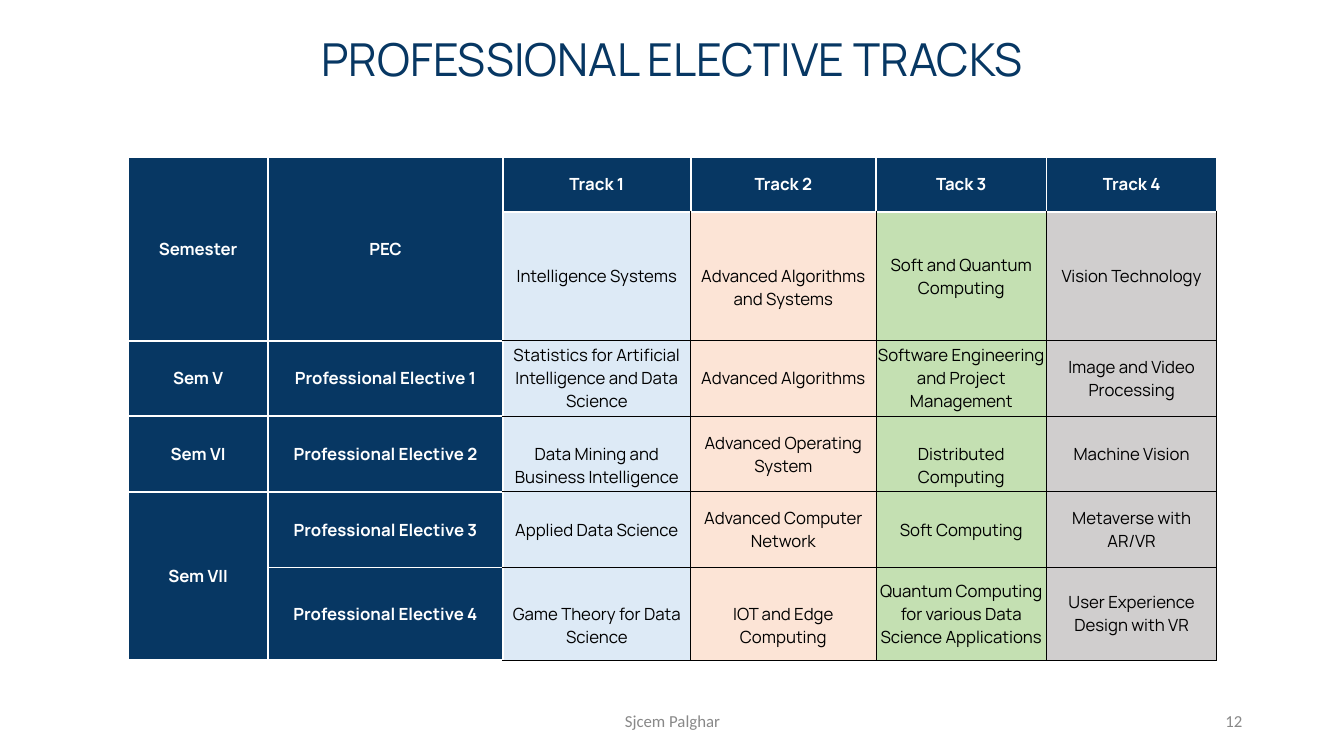
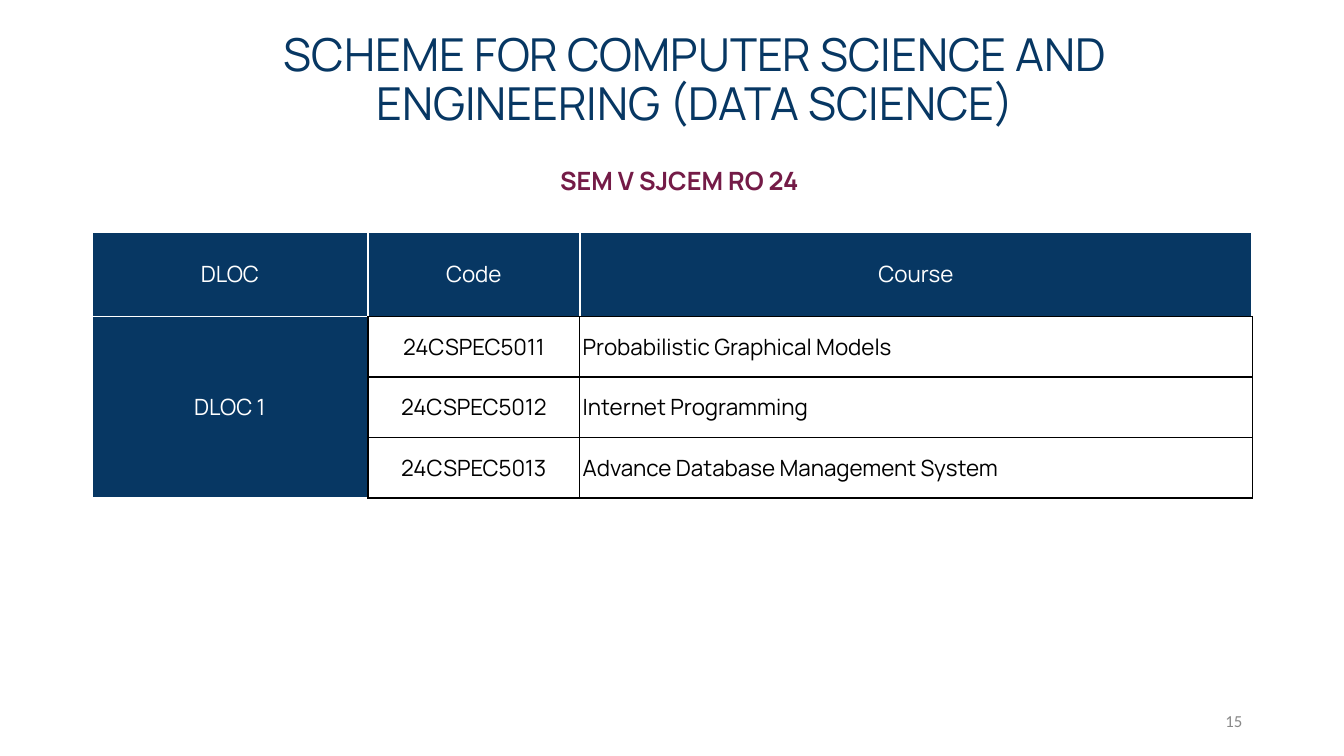
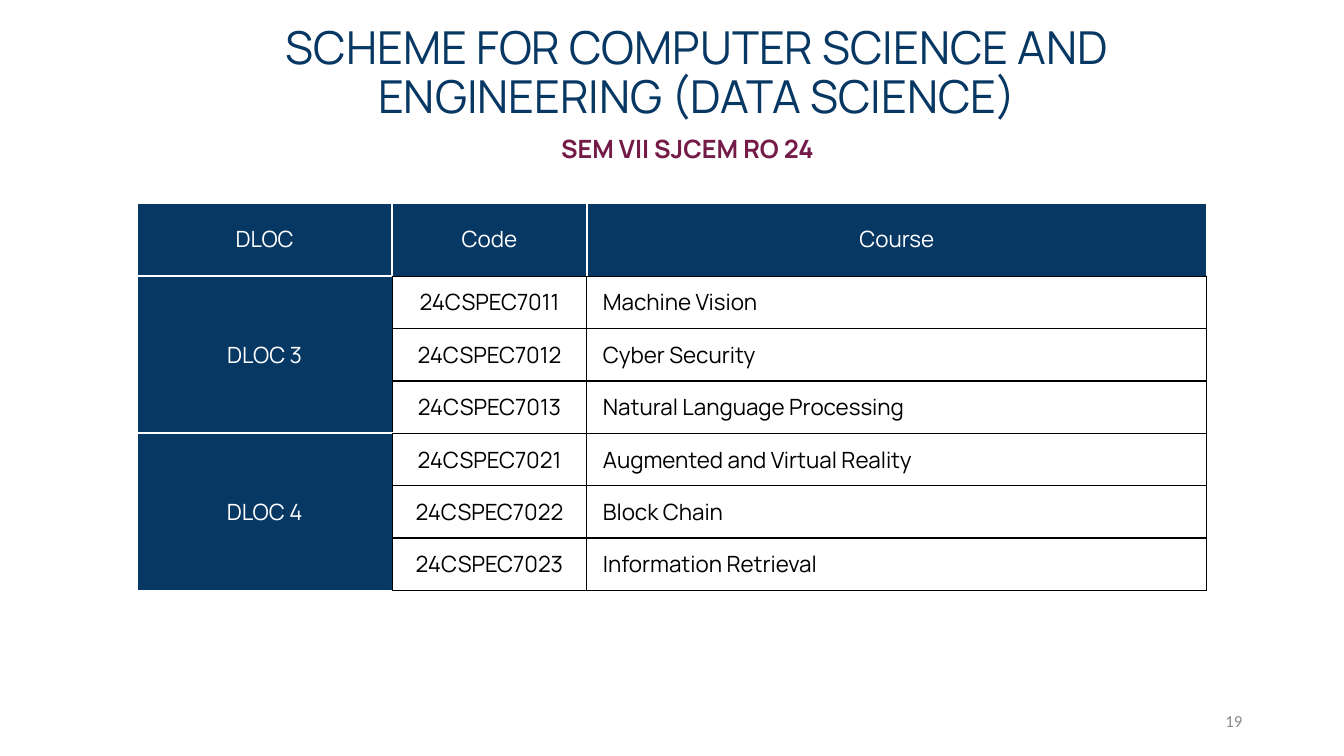
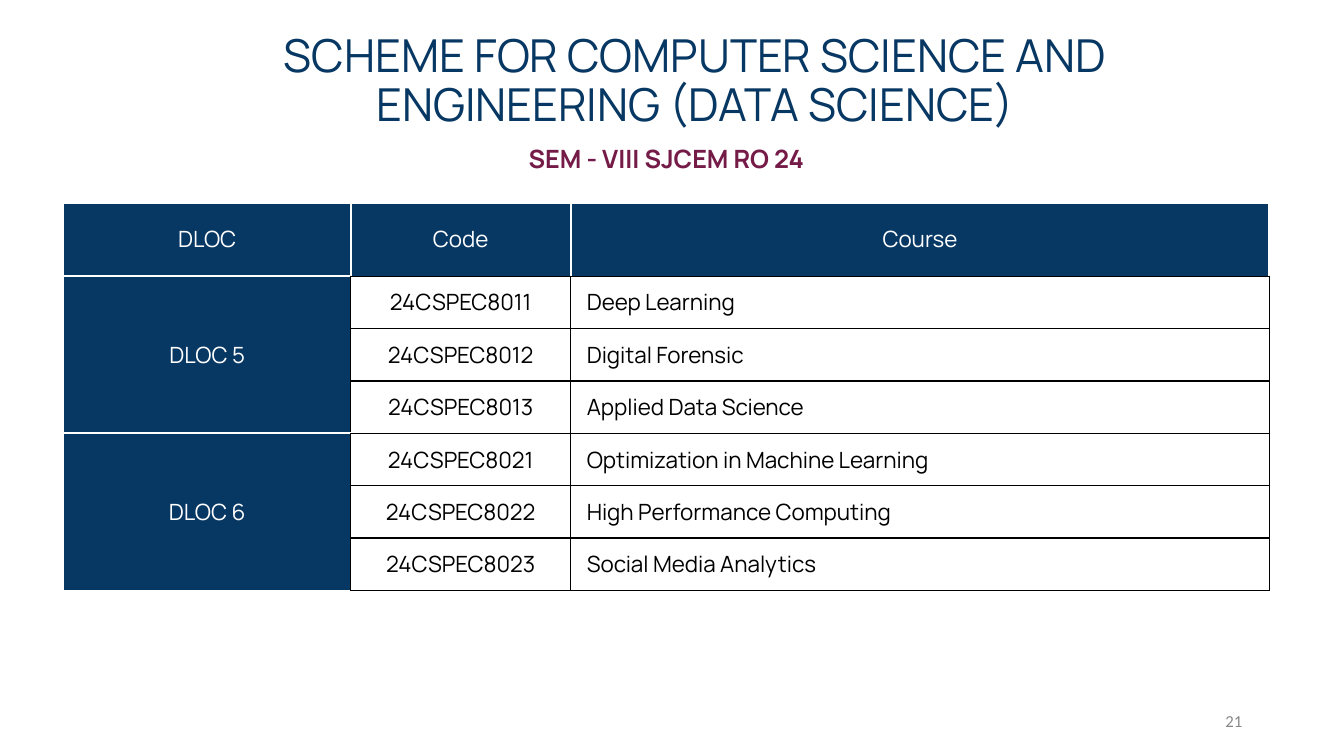
from lxml.etree import SubElement
from pptx import Presentation
from pptx.dml.color import RGBColor
from pptx.enum.text import MSO_ANCHOR, MSO_AUTO_SIZE, PP_ALIGN
from pptx.oxml.ns import qn
from pptx.util import Inches, Pt

COLORS = {
    "navy": "073763",
    "wine": "741B47",
    "gray": "888888",
    "white": "FFFFFF",
    "black": "000000",
    "blue": "DDEAF6",
    "peach": "FCE4D6",
    "green": "C4E0B2",
    "silver": "D0CECE",
}
EDGE_WIDTHS = {"white": 1.5, "black": 1}
NEIGHBORS = {"L": (0, -1), "R": (0, 1), "T": (-1, 0), "B": (1, 0)}
SCHEME_TITLE = "SCHEME FOR COMPUTER SCIENCE AND ENGINEERING (DATA SCIENCE)"
SCHEME_HEADER = ["DLOC", "Code", "Course"]
LOWERED = {
    "Advanced Algorithms and Systems",
    "Data Mining and Business Intelligence",
    "Distributed Computing",
    "Game Theory for Data Science",
    "IOT and Edge Computing",
}

SLIDES = [
    {
        "title": "PROFESSIONAL ELECTIVE TRACKS",
        "title_at": (2.67, 0.25, 8, 0.73),
        "number": "12",
        "footer": "Sjcem Palghar",
        "table_at": (1.27, 1.56),
        "widths": [1.39, 2.33, 1.86, 1.84, 1.69, 1.69],
        "heights": [0.54, 1.28, 0.75, 0.75, 0.75, 0.92],
        "label_columns": 2,
        "fills": ["navy", "navy", "blue", "peach", "green", "silver"],
        "seam": "white",
        "size": 12,
        "bold_labels": True,
        "margin": 0.01,
        "rows": [
            ["Semester", "PEC", "Track 1", "Track 2", "Tack 3", "Track 4"],
            [None, None, "Intelligence Systems", "Advanced Algorithms and Systems",
             "Soft and Quantum Computing", "Vision Technology"],
            ["Sem V", "Professional Elective 1",
             "Statistics for Artificial Intelligence and Data Science", "Advanced Algorithms",
             "Software Engineering and Project Management", "Image and Video Processing"],
            ["Sem VI", "Professional Elective 2", "Data Mining and Business Intelligence",
             "Advanced Operating System", "Distributed Computing", "Machine Vision"],
            ["Sem VII", "Professional Elective 3", "Applied Data Science",
             "Advanced Computer Network", "Soft Computing", "Metaverse with AR/VR"],
            [None, "Professional Elective 4", "Game Theory for Data Science",
             "IOT and Edge Computing", "Quantum Computing for various Data Science Applications",
             "User Experience Design with VR"],
        ],
    },
    {
        "title_at": (1.84, 0.44, 10.11, 0.73),
        "number": "15",
        "subtitle": "SEM V SJCEM RO 24",
        "subtitle_at": (5.31, 1.54, 2.71, 0.4),
        "table_at": (0.91, 2.3),
        "widths": [2.74, 2.1, 6.67],
        "heights": [0.84] + [0.6] * 3,
        "course_indent": 0.03,
        "rows": [
            SCHEME_HEADER,
            ["DLOC 1", "24CSPEC5011", "Probabilistic Graphical Models"],
            [None, "24CSPEC5012", "Internet Programming"],
            [None, "24CSPEC5013", "Advance Database Management System"],
        ],
    },
    {
        "title_at": (1.86, 0.37, 10.11, 0.73),
        "number": "19",
        "subtitle": "SEM VII SJCEM RO 24",
        "subtitle_at": (5.31, 1.22, 2.86, 0.4),
        "table_at": (1.36, 2.01),
        "widths": [2.53, 1.93, 6.15],
        "heights": [0.73] + [0.52] * 6,
        "rows": [
            SCHEME_HEADER,
            ["DLOC 3", "24CSPEC7011", "Machine Vision"],
            [None, "24CSPEC7012", "Cyber Security"],
            [None, "24CSPEC7013", "Natural Language Processing"],
            ["DLOC 4", "24CSPEC7021", "Augmented and Virtual Reality"],
            [None, "24CSPEC7022", "Block Chain"],
            [None, "24CSPEC7023", "Information Retrieval"],
        ],
    },
    {
        "title_at": (1.84, 0.45, 10.11, 0.73),
        "number": "21",
        "subtitle": "SEM - VIII SJCEM RO 24",
        "subtitle_at": (4.66, 1.32, 3.9, 0.4),
        "subtitle_align": PP_ALIGN.CENTER,
        "table_at": (0.63, 2.01),
        "widths": [2.85, 2.18, 6.93],
        "heights": [0.73] + [0.52] * 6,
        "rows": [
            SCHEME_HEADER,
            ["DLOC 5", "24CSPEC8011", "Deep Learning"],
            [None, "24CSPEC8012", "Digital Forensic"],
            [None, "24CSPEC8013", "Applied Data Science"],
            ["DLOC 6", "24CSPEC8021", "Optimization in Machine Learning"],
            [None, "24CSPEC8022", "High Performance Computing"],
            [None, "24CSPEC8023", "Social Media Analytics"],
        ],
    },
]
SCHEME_DEFAULTS = {
    "title": SCHEME_TITLE,
    "label_columns": 1,
    "fills": ["navy", "white", "white"],
    "seam": "black",
    "size": 16,
    "bold_labels": False,
    "margin": 0.03,
    "course_indent": 0.16,
    "subtitle_align": PP_ALIGN.RIGHT,
}


def write(frame, text, size, color, font="Manrope", bold=False, align=PP_ALIGN.CENTER, spacing=None):
    para = frame.paragraphs[0]
    para.alignment = align
    para.line_spacing = spacing
    span = para.add_run()
    span.text = text
    span.font.name = font
    span.font.size = Pt(size)
    span.font.bold = bold
    span.font.color.rgb = RGBColor.from_string(COLORS[color])


def draw_edge(cell, side, color):
    line = SubElement(cell._tc.get_or_add_tcPr(), qn(f"a:ln{side}"), w=str(Pt(EDGE_WIDTHS[color])))
    SubElement(SubElement(line, qn("a:solidFill")), qn("a:srgbClr"), val=COLORS[color])


deck = Presentation()
deck.slide_width = Inches(13.33)
deck.slide_height = Inches(7.5)

for content in SLIDES:
    content = SCHEME_DEFAULTS | content
    page = deck.slides.add_slide(deck.slide_layouts[5])

    title = page.shapes.title
    title.left, title.top, title.width, title.height = [Inches(value) for value in content["title_at"]]
    title.text_frame.auto_size = MSO_AUTO_SIZE.NONE
    title.text_frame.vertical_anchor = MSO_ANCHOR.MIDDLE
    write(title.text_frame, content["title"], 32.4, "navy", spacing=0.9)

    footers = [("number", (9.42, 6.95, 3, 0.4), PP_ALIGN.RIGHT),
               ("footer", (4.42, 6.95, 4.5, 0.4), PP_ALIGN.CENTER)]
    for key, place, align in footers:
        if key in content:
            box = page.shapes.add_textbox(*[Inches(value) for value in place])
            box.text_frame.word_wrap = True
            box.text_frame.vertical_anchor = MSO_ANCHOR.MIDDLE
            write(box.text_frame, content[key], 12, "gray", font="Calibri", align=align)

    if "subtitle" in content:
        box = page.shapes.add_textbox(*[Inches(value) for value in content["subtitle_at"]])
        box.text_frame.word_wrap = True
        box.text_frame.margin_top = box.text_frame.margin_bottom = Inches(0.1)
        write(box.text_frame, content["subtitle"], 18, "wine", bold=True, align=content["subtitle_align"])

    rows, widths, heights = content["rows"], content["widths"], content["heights"]
    left, top = content["table_at"]
    table = page.shapes.add_table(len(rows), len(widths), Inches(left), Inches(top),
                                  Inches(sum(widths)), Inches(sum(heights))).table
    table.first_row = table.horz_banding = False
    for column, width in zip(table.columns, widths):
        column.width = Inches(width)
    for row, height in zip(table.rows, heights):
        row.height = Inches(height)

    labels = {(r, c): r == 0 or c < content["label_columns"]
              for r in range(len(rows)) for c in range(len(widths))}
    for (r, c), is_label in labels.items():
        cell = table.cell(r, c)
        for side, (down, across) in NEIGHBORS.items():
            differs = labels.get((r + down, c + across), is_label) != is_label
            draw_edge(cell, side, content["seam"] if differs else "white" if is_label else "black")
        cell.fill.solid()
        fill = "navy" if is_label else content["fills"][c]
        cell.fill.fore_color.rgb = RGBColor.from_string(COLORS[fill])
        cell.vertical_anchor = MSO_ANCHOR.MIDDLE
        cell.margin_left = cell.margin_right = Inches(content["margin"])
        cell.margin_top = cell.margin_bottom = 0

        text = rows[r][c]
        if text is None:
            continue
        if text in LOWERED:
            cell.margin_top = Inches(0.23)
        is_course = rows[0][c] == "Course" and not is_label
        if is_course:
            cell.margin_left = Inches(content["course_indent"])
        write(cell.text_frame, text, content["size"], "white" if is_label else "black",
              bold=is_label and content["bold_labels"],
              align=PP_ALIGN.LEFT if is_course else PP_ALIGN.CENTER)

    for r, c in labels:
        if rows[r][c] is not None:
            end = r
            while end + 1 < len(rows) and rows[end + 1][c] is None:
                end += 1
            if end > r:
                table.cell(r, c).merge(table.cell(end, c))

deck.save("out.pptx")
